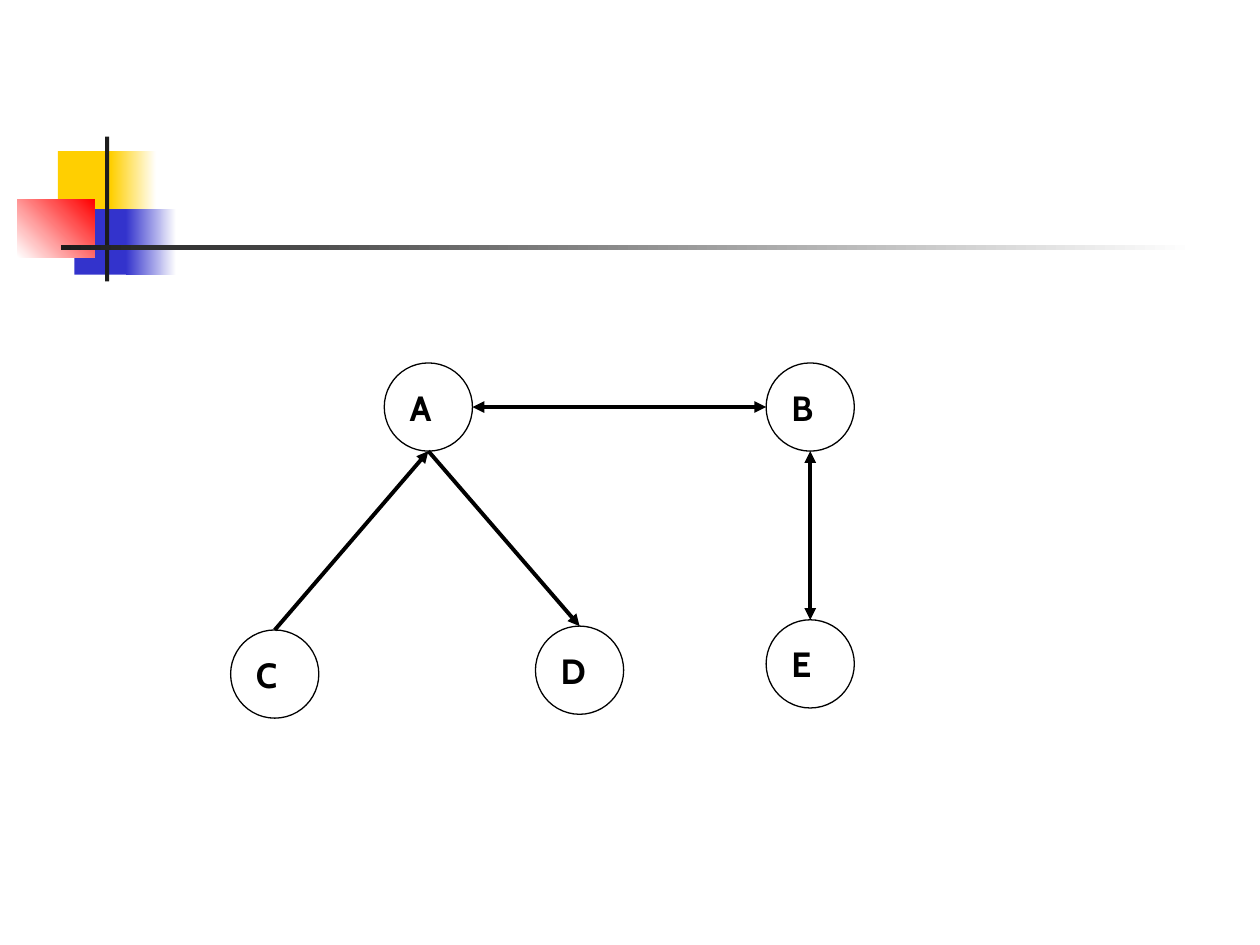
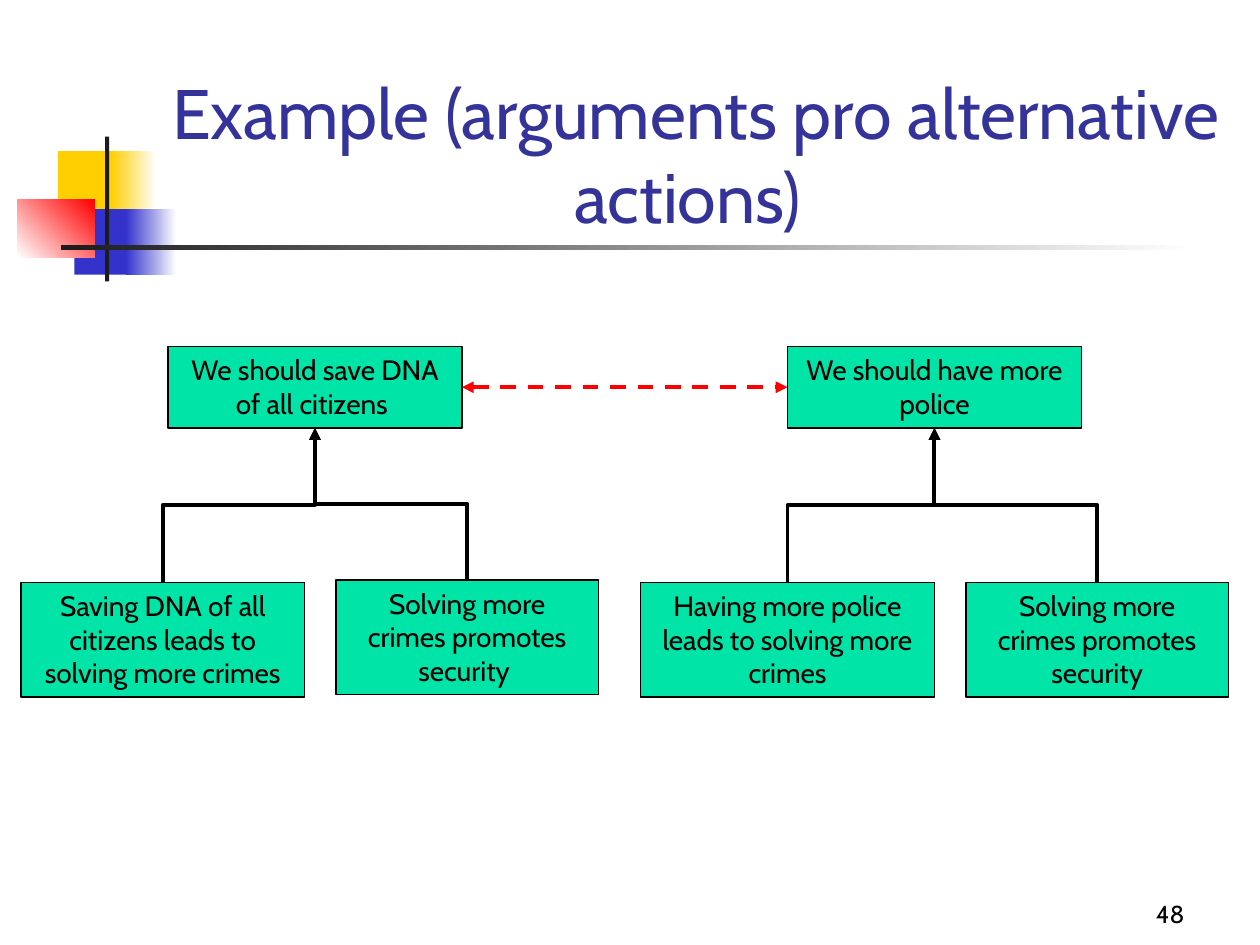
from lxml import etree
from pptx import Presentation
from pptx.dml.color import RGBColor
from pptx.enum import dml, shapes, text
from pptx.oxml.ns import qn
from pptx.util import Pt

FONT = "Cabin"
COLORS = {
    "black": "000000", "white": "FFFFFF", "ink": "1C1C1C", "yellow": "FFCF01",
    "blue": "3333CC", "red": "FF0000", "title": "333399", "green": "00E4A8",
}

# left, top, width, height, colours (two make a gradient), gradient angle
EMBLEM = [
    (33.1, 86.4, 34.6, 37.4, ["yellow"], 0),
    (63.4, 86.4, 25.9, 37.4, ["yellow", "white"], 0),
    (42.5, 119.5, 33.1, 37.4, ["blue"], 0),
    (72, 119.5, 28.8, 37.4, ["blue", "white"], 0),
    (10, 113.8, 44, 33.1, ["white", "red"], 45),
    (60, 78, 2.4, 82.8, ["ink"], 0),
    (34.8, 140.2, 648, 2.4, ["ink", "white"], 0),
]

# Attack graph: centre of each argument, then attacks by side
DIAMETER = 50.4
ARGUMENTS = {
    "A": (244.8, 232.6), "B": (463, 232.6),
    "C": (157, 385.2), "D": (331.2, 383), "E": (463, 379.4),
}
SIDES = {"top": (0, -1), "bottom": (0, 1), "left": (-1, 0), "right": (1, 0)}
ATTACKS = [  # from, side, to, side, mutual
    ("C", "top", "A", "bottom", False),
    ("A", "bottom", "D", "top", False),
    ("E", "top", "B", "bottom", True),
    ("B", "left", "A", "right", True),
]

TITLE = "Example (arguments pro alternative actions) "
PAGE_NUMBER = "48"
CLAIM_TOP, CLAIM_HEIGHT, CLAIM_WIDTH = 198, 46.6, 168
PREMISE_HEIGHT = 65.6
DEBATE = [
    {"claim": ("We should save DNA of all citizens ", 96),
     "premises": [  # text, left, top, width
         ("Saving DNA of all citizens leads to solving more crimes", 12, 332.8, 162),
         ("Solving more crimes promotes security ", 192, 331.4, 150)]},
    {"claim": ("We should have more police", 450),
     "premises": [
         ("Having more police leads to solving more crimes", 366, 332.8, 168),
         ("Solving more crimes promotes security", 552, 332.8, 150)]},
]


def rgb(name):
    return RGBColor.from_string(COLORS[name])


def write(frame, words, size, color="black", align=text.PP_ALIGN.CENTER, bold=False):
    paragraph = frame.paragraphs[0]
    paragraph.alignment = align
    run = paragraph.add_run()
    run.text = words
    run.font.name, run.font.size, run.font.bold = FONT, Pt(size), bold
    run.font.color.rgb = rgb(color)


def add_preset(slide, preset, box, outlined=True):
    shape = slide.shapes.add_shape(preset, *map(Pt, box))
    shape.shadow.inherit = False
    if outlined:
        shape.line.color.rgb = rgb("black")
        shape.line.width = Pt(0.75)
    else:
        shape.line.fill.background()
    return shape


def add_emblem(slide):
    for *box, colors, angle in EMBLEM:
        fill = add_preset(slide, shapes.MSO_SHAPE.RECTANGLE, box, outlined=False).fill
        if len(colors) == 1:
            fill.solid()
            fill.fore_color.rgb = rgb(colors[0])
        else:
            fill.gradient()
            fill.gradient_angle = angle
            for stop, color in zip(fill.gradient_stops, colors):
                stop.color.rgb = rgb(color)


def add_label(slide, box, words, size, **style):
    """Add wrapped text that rests on the bottom of its box."""
    frame = slide.shapes.add_textbox(*map(Pt, box)).text_frame
    frame.word_wrap = True
    frame.vertical_anchor = text.MSO_ANCHOR.BOTTOM
    write(frame, words, size, **style)


def add_arrow(slide, start, end, mutual=False, color="black", dashed=False,
              kind=shapes.MSO_CONNECTOR.STRAIGHT):
    arrow = slide.shapes.add_connector(kind, *map(Pt, (*start, *end)))
    arrow.line.color.rgb = rgb(color)
    arrow.line.width = Pt(2.25)
    if dashed:
        arrow.line.dash_style = dml.MSO_LINE.DASH
    properties = arrow._element.spPr
    outline = properties.find(qn("a:ln"))
    for tip in ["a:headEnd", "a:tailEnd"] if mutual else ["a:tailEnd"]:
        etree.SubElement(outline, qn(tip), type="triangle")
    etree.SubElement(properties, qn("a:effectLst"))
    return arrow


def add_riser(slide, start, end):
    """Add an elbow arrow that leaves and arrives vertically, by turning a level one."""
    (x0, y0), (x1, y1) = start, end
    mid_x, mid_y = (x0 + x1) / 2, (y0 + y1) / 2
    rightward = x1 > x0
    half_rise = (y0 - y1) / 2 * (1 if rightward else -1)
    half_run = abs(x1 - x0) / 2
    arrow = add_arrow(slide, (mid_x - half_rise, mid_y - half_run),
                      (mid_x + half_rise, mid_y + half_run),
                      kind=shapes.MSO_CONNECTOR.ELBOW)
    turn = 270 if rightward else 90
    arrow._element.spPr.find(qn("a:xfrm")).set("rot", str(turn * 60000))


def add_statement(slide, words, *box):
    shape = add_preset(slide, shapes.MSO_SHAPE.RECTANGLE, box)
    shape.fill.solid()
    shape.fill.fore_color.rgb = rgb("green")
    frame = shape.text_frame
    frame.word_wrap = True
    frame.auto_size = text.MSO_AUTO_SIZE.SHAPE_TO_FIT_TEXT
    frame.vertical_anchor = text.MSO_ANCHOR.TOP
    write(frame, words, 16)


def draw_attack_graph(slide):
    radius = DIAMETER / 2
    for name, (x, y) in ARGUMENTS.items():
        circle = add_preset(slide, shapes.MSO_SHAPE.OVAL,
                            (x - radius, y - radius, DIAMETER, DIAMETER))
        circle.fill.background()
        circle.text_frame.word_wrap = False
        circle.text_frame.vertical_anchor = text.MSO_ANCHOR.MIDDLE
        write(circle.text_frame, name, 20, align=text.PP_ALIGN.LEFT, bold=True)

    def port(name, side):
        return [c + radius * d for c, d in zip(ARGUMENTS[name], SIDES[side])]

    for source, source_side, target, target_side, mutual in ATTACKS:
        add_arrow(slide, port(source, source_side), port(target, target_side), mutual)


def draw_debate(slide):
    add_label(slide, (534, 498, 150, 36), PAGE_NUMBER, 14, align=text.PP_ALIGN.RIGHT)
    add_label(slide, (90.7, 49, 613.4, 90), TITLE, 40, color="title")
    for side in DEBATE:
        words, claim_left = side["claim"]
        add_statement(slide, words, claim_left, CLAIM_TOP, CLAIM_WIDTH, CLAIM_HEIGHT)
        claim_foot = (claim_left + CLAIM_WIDTH / 2, CLAIM_TOP + CLAIM_HEIGHT)
        for words, left, top, width in side["premises"]:
            add_statement(slide, words, left, top, width, PREMISE_HEIGHT)
            add_riser(slide, (left + width / 2, top), claim_foot)
    first_left, second_left = (side["claim"][1] for side in DEBATE)
    middle = CLAIM_TOP + CLAIM_HEIGHT / 2
    add_arrow(slide, (first_left + CLAIM_WIDTH, middle), (second_left, middle),
              mutual=True, color="red", dashed=True)


def main():
    deck = Presentation()
    deck.slide_width, deck.slide_height = Pt(720), Pt(540)
    for draw in (draw_attack_graph, draw_debate):
        slide = deck.slides.add_slide(deck.slide_layouts[6])
        add_emblem(slide)
        draw(slide)
    deck.save("out.pptx")


if __name__ == "__main__":
    main()
